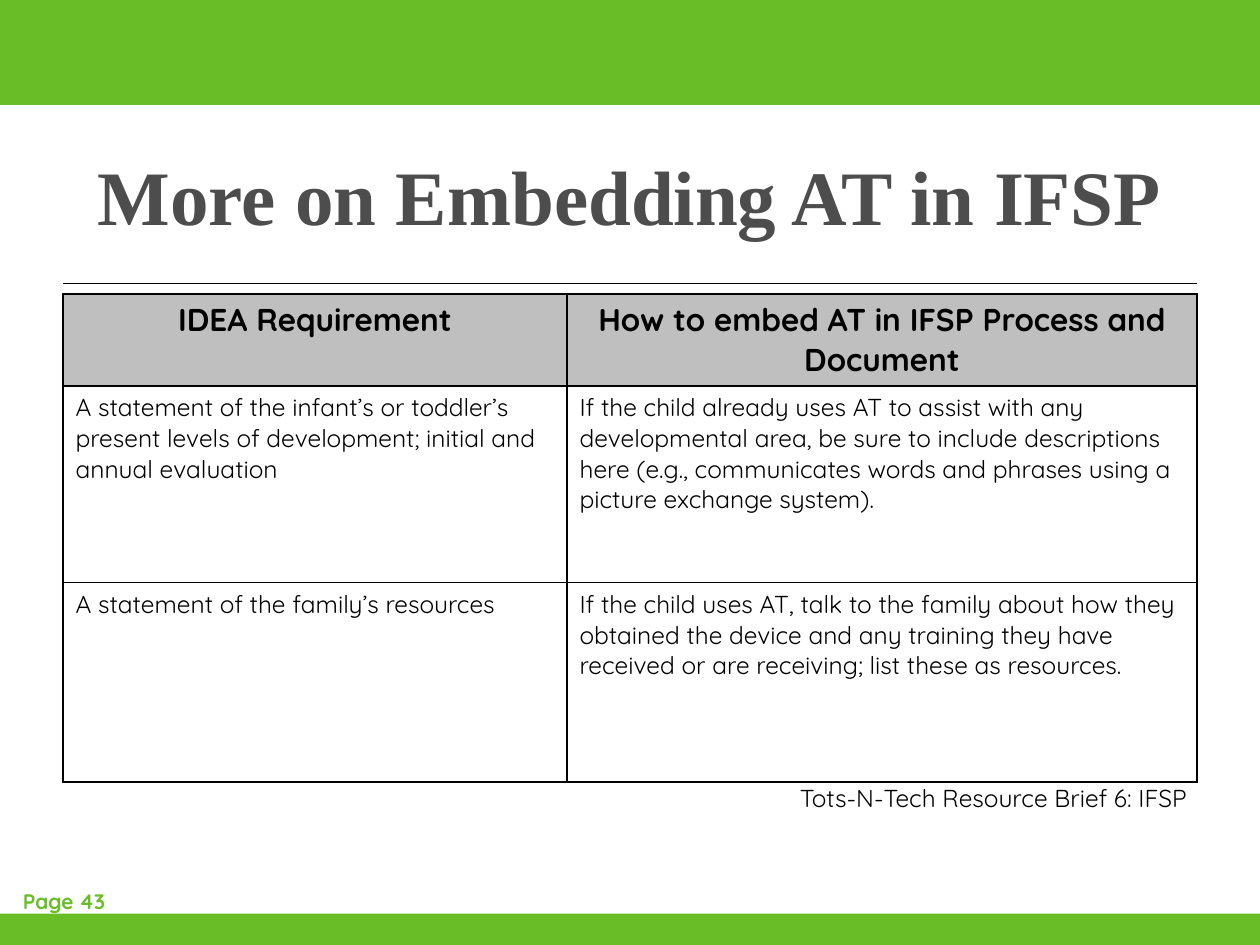
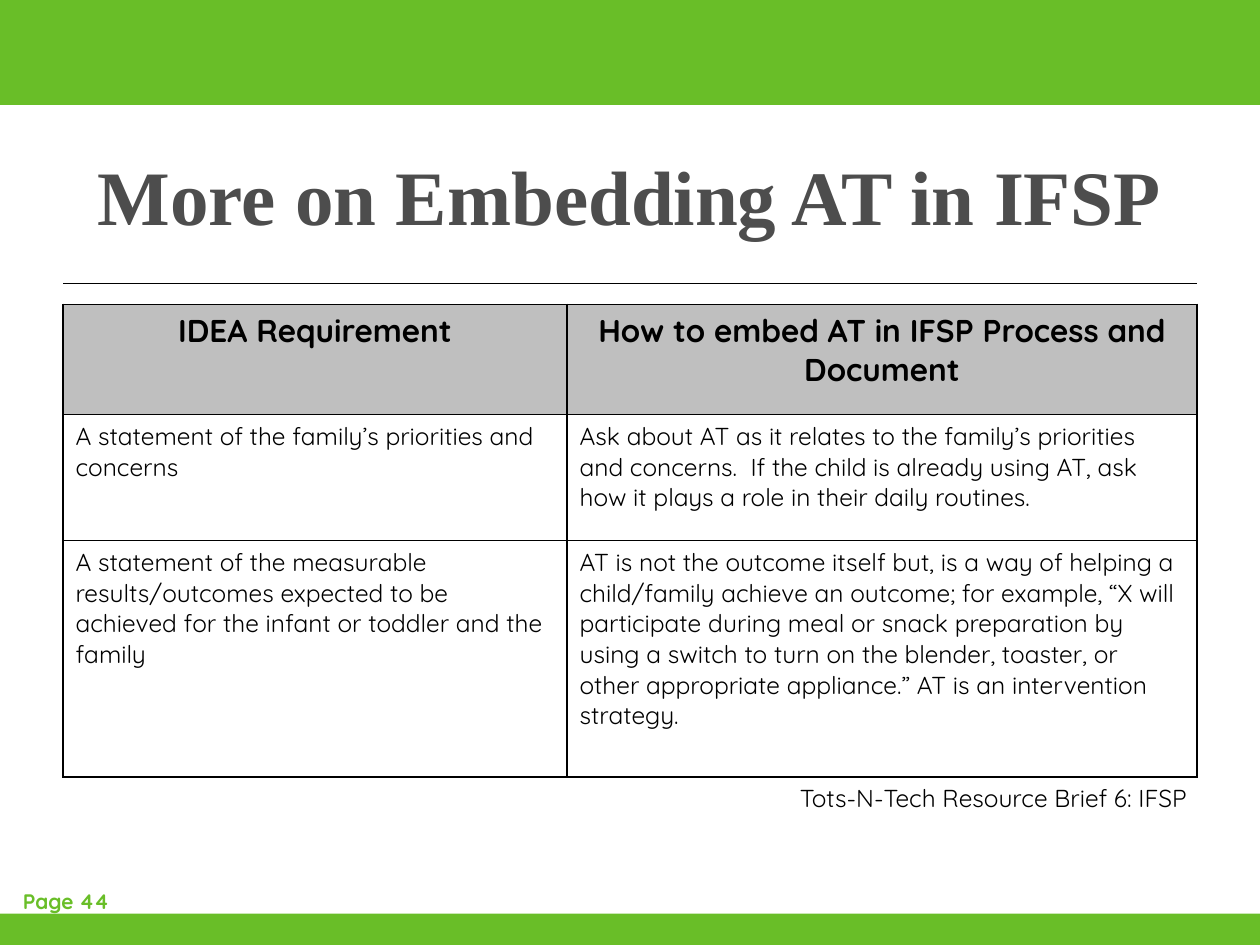
import pptx
import pptx.util
import pptx.dml.color
import pptx.enum.shapes
import pptx.enum.text
import pptx.oxml
import lxml.etree
from dataclasses import dataclass


@dataclass(frozen=True)
class Theme:
    green = pptx.dml.color.RGBColor.from_string("69BE28")
    title_grey = pptx.dml.color.RGBColor.from_string("4D4D4D")
    header_grey = pptx.dml.color.RGBColor.from_string("BFBFBF")
    black = pptx.dml.color.RGBColor.from_string("000000")
    title_font = "Times New Roman"
    body_font = "Quicksand"
    title_size = 44
    header_size = 18
    body_size = 14
    page_size = 12


def grid(*steps):
    return [pptx.util.Inches(step / 12) for step in steps]


def write(text_frame, text, size, color, bold=False, font=Theme.body_font, alignment=None):
    text_frame.text = text
    paragraph = text_frame.paragraphs[0]
    paragraph.alignment = alignment
    run_font = paragraph.runs[0].font
    run_font.name = font
    run_font.size = pptx.util.Pt(size)
    run_font.bold = bold
    run_font.color.rgb = color


center = pptx.enum.text.PP_ALIGN.CENTER
namespace = "http://schemas.openxmlformats.org/drawingml/2006/main"
title_text = "More on Embedding AT in IFSP"
source_text = "Tots-N-Tech Resource Brief 6: IFSP"
header = ("IDEA Requirement", "How to embed AT in IFSP Process and Document")
column_widths = grid(48, 60)
bands = [grid(0, 0, 120, 10), grid(0, 87, 120, 3)]

pages = [
    (43, 28, grid(8.75, 18.75, 19), [
        header,
        ("A statement of the infant’s or toddler’s present levels of development; "
         "initial and annual evaluation",
         "If the child already uses AT to assist with any developmental area, be sure to "
         "include descriptions here (e.g., communicates words and phrases using a picture "
         "exchange system)."),
        ("A statement of the family’s resources",
         "If the child uses AT, talk to the family about how they obtained the device and any "
         "training they have received or are receiving; list these as resources."),
    ]),
    (44, 29, grid(10.5, 12, 22.5), [
        header,
        ("A statement of the family’s priorities and concerns",
         "Ask about AT as it relates to the family’s priorities and concerns.  If the child is "
         "already using AT, ask how it plays a role in their daily routines."),
        ("A statement of the measurable results/outcomes expected to be achieved for the infant "
         "or toddler and the family",
         "AT is not the outcome itself but, is a way of helping a child/family achieve an "
         "outcome; for example, “X will participate during meal or snack preparation by using a "
         "switch to turn on the blender, toaster, or other appropriate appliance.” AT is an "
         "intervention strategy."),
    ]),
]

presentation = pptx.Presentation()
presentation.slide_width, presentation.slide_height = grid(120, 90)

for page_number, table_top, row_heights, rows in pages:
    slide = presentation.slides.add_slide(presentation.slide_layouts[5])

    for band_box in bands:
        band = slide.shapes.add_shape(pptx.enum.shapes.MSO_SHAPE.RECTANGLE, *band_box)
        band.shadow.inherit = False
        band.fill.solid()
        band.fill.fore_color.rgb = Theme.green
        band.line.fill.background()

    rule = slide.shapes.add_connector(
        pptx.enum.shapes.MSO_CONNECTOR.STRAIGHT, *grid(6, 27, 114, 27))
    rule.line.color.rgb = Theme.black
    rule.line.width = pptx.util.Pt(0.75)
    lxml.etree.SubElement(rule._element.spPr, f"{{{namespace}}}effectLst")

    title = slide.shapes.title
    title.left, title.top, title.width, title.height = grid(6, 10, 108, 17)
    title.text_frame.vertical_anchor = pptx.enum.text.MSO_ANCHOR.MIDDLE
    write(title.text_frame, title_text, Theme.title_size, Theme.title_grey,
          bold=True, font=Theme.title_font, alignment=center)

    table_height = sum(row_heights)
    table = slide.shapes.add_table(
        len(rows), len(header), *grid(6, table_top, 108), table_height).table
    for column, width in zip(table.columns, column_widths):
        column.width = width
    for row_index, row_texts in enumerate(rows):
        table.rows[row_index].height = row_heights[row_index]
        is_header = row_index == 0
        for column_index, text in enumerate(row_texts):
            cell = table.cell(row_index, column_index)
            write(cell.text_frame, text,
                  Theme.header_size if is_header else Theme.body_size, Theme.black,
                  bold=is_header, alignment=center if is_header else None)
            properties = cell._tc.get_or_add_tcPr()
            for side in ("lnL", "lnR", "lnT", "lnB"):
                properties.append(pptx.oxml.parse_xml(
                    f'<a:{side} xmlns:a="{namespace}" w="{pptx.util.Pt(1)}"><a:solidFill>'
                    f'<a:srgbClr val="{Theme.black}"/></a:solidFill></a:{side}>'))
            if is_header:
                cell.fill.solid()
                cell.fill.fore_color.rgb = Theme.header_grey
            else:
                cell.fill.background()

    page_label = slide.shapes.add_textbox(*grid(1, 84, 66, 4))
    page_label.text_frame.word_wrap = True
    write(page_label.text_frame, f"Page {page_number}", Theme.page_size, Theme.green, bold=True)

    source = slide.shapes.add_textbox(*grid(75, 74, 39.5, 4))
    source.text_frame.word_wrap = False
    write(source.text_frame, source_text, Theme.body_size, Theme.black)

presentation.save("out.pptx")
